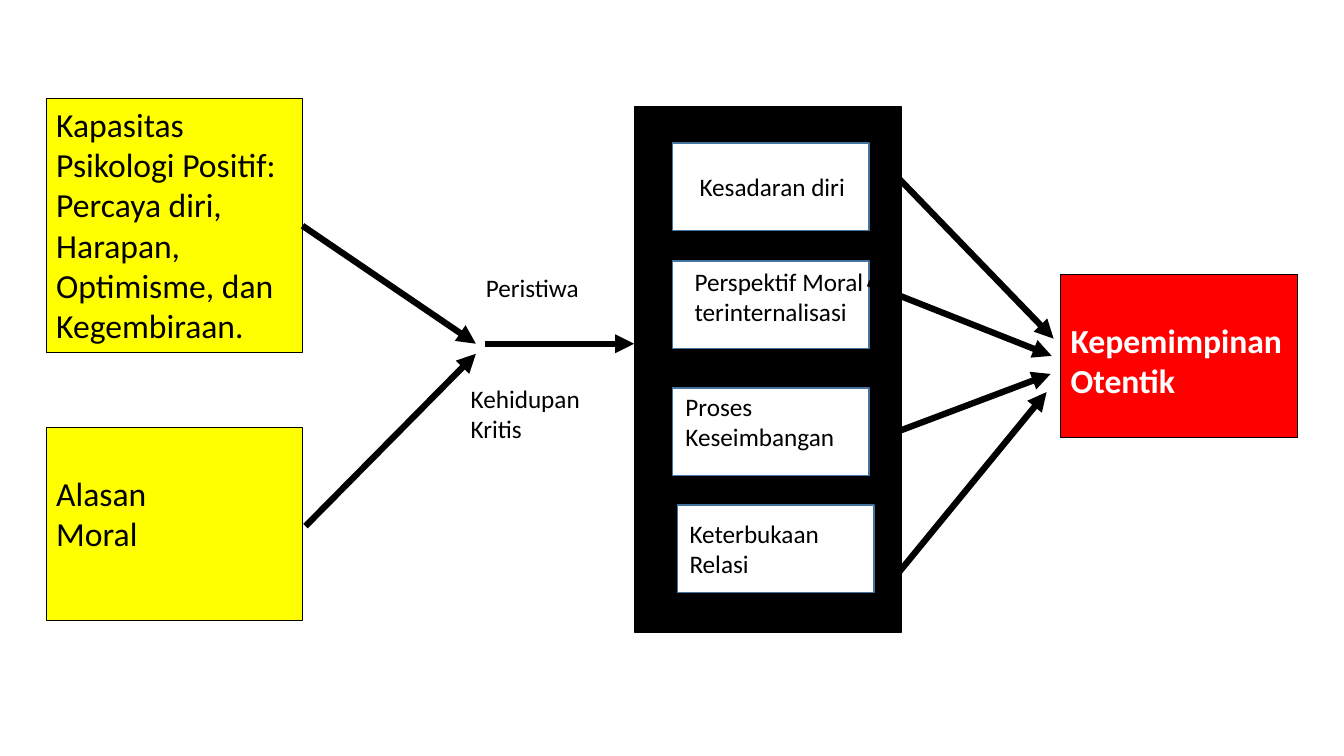
from pptx import Presentation
from pptx.dml.color import RGBColor
from pptx.enum.shapes import MSO_CONNECTOR, MSO_SHAPE
from pptx.enum.text import MSO_ANCHOR, PP_ALIGN
from pptx.oxml.ns import qn
from pptx.util import Inches, Pt
from lxml.etree import SubElement

THEME = {
    "font": "Calibri", "large": Pt(24), "small": Pt(18),
    "black": RGBColor(0, 0, 0), "white": RGBColor(255, 255, 255),
    "yellow": RGBColor(255, 255, 0), "red": RGBColor(255, 0, 0),
    "blue": RGBColor(0x43, 0x73, 0x9E),
}

prs = Presentation()
prs.slide_width, prs.slide_height = Inches(13.33), Inches(7.5)
slide = prs.slides.add_slide(prs.slide_layouts[6])


def add_box(place, fill, line, weight):
    box = slide.shapes.add_shape(MSO_SHAPE.RECTANGLE, *map(Inches, place))
    box.shadow.inherit = False
    box.fill.solid()
    box.fill.fore_color.rgb = THEME[fill]
    box.line.color.rgb = THEME[line]
    box.line.width = Pt(weight)
    return box


def write(holder, lines, size, color="black", bold=False, top=0.05):
    frame = holder.text_frame
    frame_format = {"word_wrap": True, "vertical_anchor": MSO_ANCHOR.TOP,
                    "margin_top": Inches(top)}
    for key, value in frame_format.items():
        setattr(frame, key, value)
    font_format = {"name": THEME["font"], "size": THEME[size], "bold": bold}
    frame.text = "\n".join(lines)
    for paragraph in frame.paragraphs:
        paragraph.alignment = PP_ALIGN.LEFT
        for key, value in font_format.items():
            setattr(paragraph.font, key, value)
        paragraph.font.color.rgb = THEME[color]


# Antecedents, on the left
capacity = add_box((0.46, 0.98, 2.54, 2.52), "yellow", "black", 0.75)
write(capacity, ["Kapasitas Psikologi Positif:", "Percaya diri,", "Harapan,",
                 "Optimisme, dan", "Kegembiraan."], "large")
moral_reason = add_box((0.46, 4.24, 2.54, 1.92), "yellow", "black", 0.75)
write(moral_reason, ["Alasan", "Moral"], "large", top=0.45)

# Panel with the four components
add_box((6.29, 1.06, 2.65, 5.21), "black", "black", 1)
for left, top in [(6.67, 1.42), (6.67, 2.59), (6.67, 3.85), (6.72, 5.01)]:
    add_box((left, top, 1.95, 0.87), "white", "blue", 1)

# Component names and labels of the critical life events
labels = [
    ("Peristiwa", 4.72, 2.65, 1.57, 0.4),
    ("Kehidupan Kritis", 4.57, 3.75, 1.57, 0.71),
    ("Kesadaran diri", 6.84, 1.65, 1.78, 0.4),
    ("Perspektif Moral terinternalisasi", 6.79, 2.59, 1.95, 0.71),
    ("Proses Keseimbangan", 6.7, 3.83, 1.95, 0.71),
    ("Keterbukaan Relasi", 6.74, 5.09, 1.95, 0.71),
]
for words, *place in labels:
    write(slide.shapes.add_textbox(*map(Inches, place)), [words], "small")

# Outcome, on the right
leadership = add_box((10.52, 2.72, 2.35, 1.62), "red", "black", 0.75)
write(leadership, ["Kepemimpinan Otentik"], "large", "white", True, top=0.45)

# Arrows: start, end and the box whose right side they leave
arrows = [
    (3, 2.24, 4.72, 3.41, capacity),
    (3.03, 5.22, 4.72, 3.51, None),
    (4.81, 3.41, 6.29, 3.41, None),
    (8.74, 1.59, 10.45, 3.36, None),
    (8.61, 2.81, 10.43, 3.53, None),
    (8.88, 4.29, 10.42, 3.71, None),
    (8.66, 5.99, 10.38, 3.89, None),
]
for *ends, source in arrows:
    arrow = slide.shapes.add_connector(MSO_CONNECTOR.STRAIGHT, *map(Inches, ends))
    if source is not None:
        arrow.begin_connect(source, 3)
    arrow.line.color.rgb = THEME["black"]
    arrow.line.width = Pt(4.5)
    SubElement(arrow.line._get_or_add_ln(), qn("a:tailEnd"), type="triangle")
    SubElement(arrow._element.spPr, qn("a:effectLst"))

prs.save("out.pptx")
